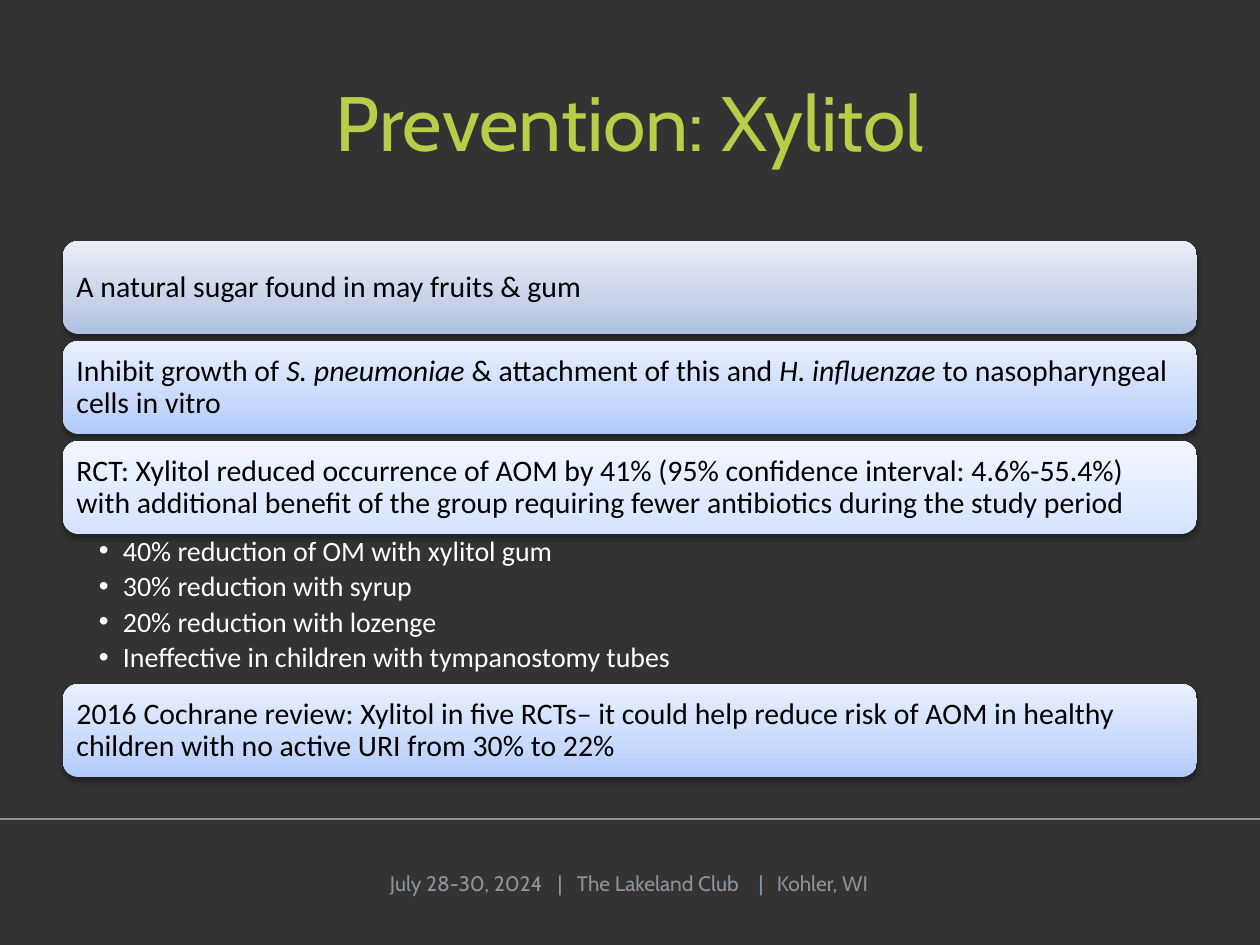
from copy import deepcopy
from dataclasses import dataclass

from lxml.etree import SubElement
from pptx import Presentation
from pptx.dml.color import RGBColor
from pptx.enum.shapes import MSO_CONNECTOR, MSO_SHAPE
from pptx.enum.text import MSO_ANCHOR, PP_ALIGN
from pptx.oxml.ns import qn
from pptx.util import Emu, Pt

SCALE = 914400 / 126


@dataclass(frozen=True)
class Theme:
    background: str = "333333"
    title: str = "B8CE48"
    muted: str = "8A949C"
    card_text: str = "000000"
    bullet_text: str = "FFFFFF"
    shadow: str = "000000"
    heading_font: str = "Cabin"
    body_font: str = "Calibri"
    title_size: int = 44
    card_size: int = 17
    bullet_size: int = 16
    footer_size: int = 12
    grey_blue: tuple[str, ...] = ("AFC0E1", "C7D2E9", "E9EEF7")
    sky_blue: tuple[str, ...] = ("B0CAFB", "C8D9FB", "E9F0FF")
    pale_blue: tuple[str, ...] = ("D4E2FD", "E0EAFE", "F2F6FF")


@dataclass(frozen=True)
class Span:
    text: str
    italic: bool = False


@dataclass(frozen=True)
class Area:
    left: int
    top: int
    width: int
    height: int


@dataclass(frozen=True)
class Card:
    top: int
    gradient: tuple[str, ...]
    spans: tuple[Span, ...]


THEME = Theme()
GRADIENT_POSITIONS = (0, 0.35, 1)
MARGIN, CARD_WIDTH, CARD_HEIGHT, CARD_PITCH = 63, 1134, 93, 100
FIRST_CARD, LAST_CARD = 241, 684

CARDS = (
    Card(FIRST_CARD, THEME.grey_blue, (Span("A natural sugar found in may fruits & gum"),)),
    Card(FIRST_CARD + CARD_PITCH, THEME.sky_blue, (
        Span("Inhibit growth of "),
        Span("S. pneumoniae ", italic=True),
        Span("& attachment of this and "),
        Span("H. influenzae ", italic=True),
        Span("to nasopharyngeal cells in vitro"),
    )),
    Card(FIRST_CARD + 2 * CARD_PITCH, THEME.pale_blue, (
        Span("RCT: Xylitol reduced occurrence of AOM by 41% (95% confidence interval: "
             "4.6%-55.4%) with additional benefit of the group requiring fewer "
             "antibiotics during the study period"),
    )),
    Card(LAST_CARD, THEME.sky_blue, (
        Span("2016 Cochrane review: Xylitol in five RCTs– it could help reduce risk of "
             "AOM in healthy children with no active URI from 30% to 22%"),
    )),
)
BULLETS = (
    "40% reduction of OM with xylitol gum",
    "30% reduction with syrup",
    "20% reduction with lozenge",
    "Ineffective in children with tympanostomy tubes",
)
FOOTER = "July 28-30, 2024\t|\tThe Lakeland Club\t|\tKohler, WI"
FOOTER_TABS = ((170, "ctr"), (187, "l"), (371, "ctr"), (387, "l"))


def px(length: int) -> Emu:
    return Emu(round(length * SCALE))


def place(area: Area) -> tuple[Emu, ...]:
    return px(area.left), px(area.top), px(area.width), px(area.height)


def write(box, paragraphs, *, font: str, size: int, color: str, align=PP_ALIGN.LEFT,
          anchor=MSO_ANCHOR.MIDDLE, insets=(13, 6, 13, 6), line_spacing=1.0,
          space_after=0, hanging=0, tabs=()) -> None:
    frame = box.text_frame
    frame.word_wrap = True
    frame.vertical_anchor = anchor
    (frame.margin_left, frame.margin_top,
     frame.margin_right, frame.margin_bottom) = map(px, insets)
    for index, spans in enumerate(paragraphs):
        para = frame.add_paragraph() if index else frame.paragraphs[0]
        para.alignment = align
        para.line_spacing = line_spacing
        para.space_after = Pt(space_after)
        properties = para._p.get_or_add_pPr()
        if hanging:
            para.level = 1
            properties.set("marL", str(px(hanging)))
            properties.set("indent", str(-px(hanging)))
            SubElement(properties, qn("a:buFont"), typeface="Arial")
            SubElement(properties, qn("a:buChar"), char="•")
        if tabs:
            tab_list = SubElement(properties, qn("a:tabLst"))
            for position, kind in tabs:
                SubElement(tab_list, qn("a:tab"), pos=str(px(position)), algn=kind)
        for span in spans:
            run = para.add_run()
            run.text = span.text
            run.font.name = font
            run.font.size = Pt(size)
            run.font.italic = span.italic
            run.font.color.rgb = RGBColor.from_string(color)


def fill_gradient(shape, colors: tuple[str, ...]) -> None:
    shape.fill.gradient()
    shape.fill.gradient_angle = 90
    stop_list = shape._element.spPr.find(qn("a:gradFill")).find(qn("a:gsLst"))
    stop_list.insert(1, deepcopy(stop_list[0]))
    for stop, position, color in zip(shape.fill.gradient_stops, GRADIENT_POSITIONS, colors):
        stop.position = position
        stop.color.rgb = RGBColor.from_string(color)


def drop_shadow(shape) -> None:
    shape.shadow.inherit = False
    effects = shape._element.spPr.find(qn("a:effectLst"))
    shadow = SubElement(effects, qn("a:outerShdw"), blurRad="40000", dist="20000",
                        dir="5400000", rotWithShape="0")
    color = SubElement(shadow, qn("a:srgbClr"), val=THEME.shadow)
    SubElement(color, qn("a:alpha"), val="38000")


def draw_card(page, card: Card) -> None:
    area = Area(MARGIN, card.top, CARD_WIDTH, CARD_HEIGHT)
    box = page.shapes.add_shape(MSO_SHAPE.ROUNDED_RECTANGLE, *place(area))
    box.line.fill.background()
    fill_gradient(box, card.gradient)
    drop_shadow(box)
    write(box, [card.spans], font=THEME.body_font, size=THEME.card_size,
          color=THEME.card_text, insets=(9, 9, 9, 9), line_spacing=0.9)


def draw_text(page, area: Area, lines: tuple[str, ...], **style) -> None:
    box = page.shapes.add_textbox(*place(area))
    write(box, [(Span(line),) for line in lines], **style)


def draw_rule(page, top: int, width: int) -> None:
    rule = page.shapes.add_connector(MSO_CONNECTOR.STRAIGHT, 0, px(top), px(width), px(top))
    rule.line.color.rgb = RGBColor.from_string(THEME.muted)
    rule.line.width = Pt(0.75)
    SubElement(rule._element.spPr, qn("a:effectLst"))


def main() -> None:
    deck = Presentation()
    deck.slide_width, deck.slide_height = px(1260), px(945)
    page = deck.slides.add_slide(deck.slide_layouts[6])
    page.background.fill.solid()
    page.background.fill.fore_color.rgb = RGBColor.from_string(THEME.background)

    draw_rule(page, 819, 1260)
    draw_text(page, Area(MARGIN, 42, CARD_WIDTH, 158), ("Prevention: Xylitol",),
              font=THEME.heading_font, size=THEME.title_size, color=THEME.title,
              align=PP_ALIGN.CENTER)
    for card in CARDS:
        draw_card(page, card)
    draw_text(page, Area(MARGIN, 534, CARD_WIDTH, 150), BULLETS,
              font=THEME.body_font, size=THEME.bullet_size, color=THEME.bullet_text,
              anchor=MSO_ANCHOR.TOP, insets=(36, 3, 15, 3), line_spacing=0.9,
              space_after=3, hanging=24)
    draw_text(page, Area(347, 858, 567, 50), (FOOTER,),
              font=THEME.heading_font, size=THEME.footer_size, color=THEME.muted,
              insets=(43, 6, 13, 6), tabs=FOOTER_TABS)
    deck.save("out.pptx")


if __name__ == "__main__":
    main()
